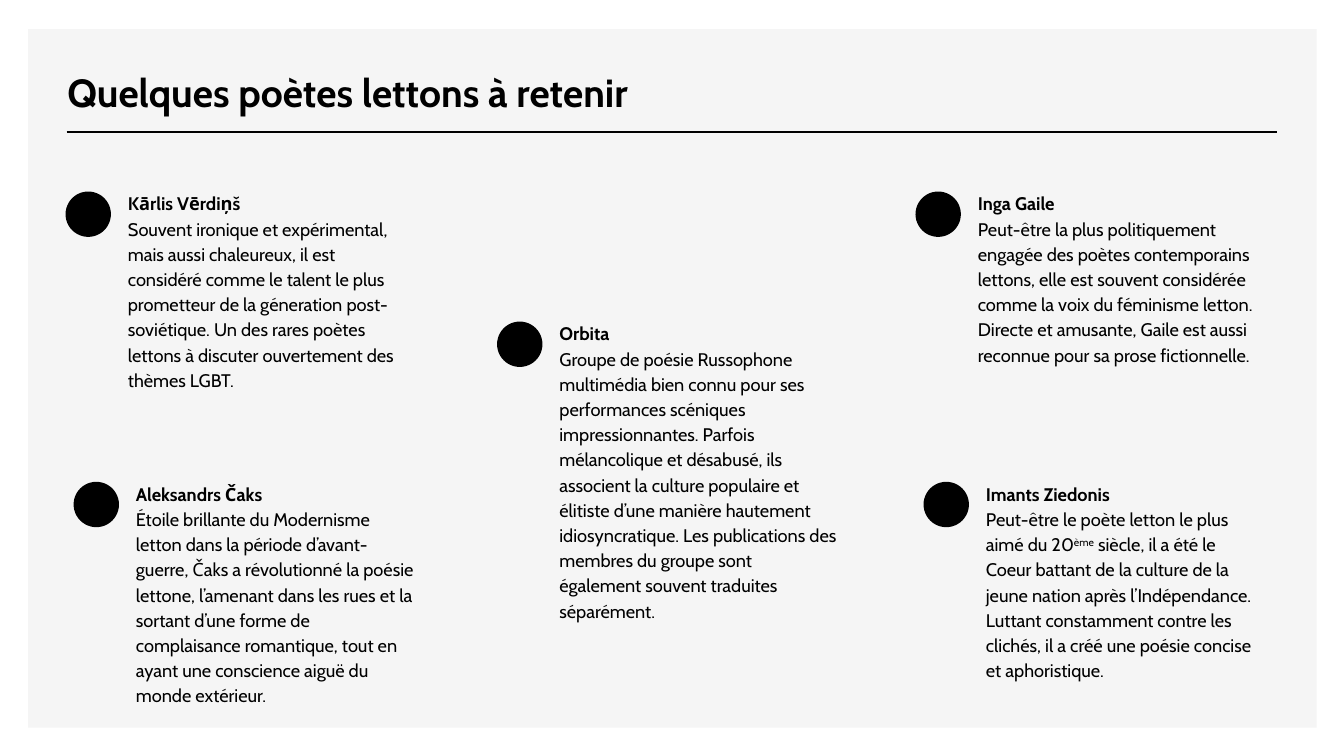
import pptx
import pptx.dml.color
import pptx.enum.shapes
import pptx.enum.text
import pptx.util
from lxml import etree
from pptx.util import Inches, Pt

TITLE = "Quelques poètes lettons à retenir"

# left and top of the dot, text height, name, description as (text, superscript) runs
POETS = [
    (0.65, 1.9, 2.05, "Kārlis Vērdiņš", [
        ("Souvent ironique et expérimental, mais aussi chaleureux, il est considéré comme "
         "le talent le plus prometteur de la géneration post-soviétique. Un des rares poètes "
         "lettons à discuter ouvertement des thèmes LGBT.", False)]),
    (4.93, 3.19, 3.1, "Orbita", [
        ("Groupe de poésie Russophone multimédia bien connu pour ses performances scéniques "
         "impressionnantes. Parfois mélancolique et désabusé, ils associent la culture "
         "populaire et élitiste d’une manière hautement idiosyncratique. Les publications des "
         "membres du groupe sont également souvent traduites séparément.", False)]),
    (9.08, 1.9, 2.32, "Inga Gaile", [
        ("Peut-être la plus politiquement engagée des poètes contemporains lettons, elle est "
         "souvent considérée comme la voix du féminisme letton. Directe et amusante, Gaile "
         "est aussi reconnue pour sa prose fictionnelle.", False)]),
    (0.73, 4.78, 2.3, "Aleksandrs Čaks", [
        ("Étoile brillante du Modernisme letton dans la période d’avant-guerre, Čaks a "
         "révolutionné la poésie lettone, l’amenant dans les rues et la sortant d’une forme "
         "de complaisance romantique, tout en ayant une conscience aiguë du monde extérieur.",
         False)]),
    (9.16, 4.78, 2.4, "Imants Ziedonis", [
        ("Peut-être le poète letton le plus aimé du 20", False),
        ("ème", True),
        (" siècle, il a été le Coeur battant de la culture de la jeune nation après "
         "l’Indépendance. Luttant constamment contre les clichés, il a créé une poésie "
         "concise et aphoristique.", False)]),
]

THEME = {
    "font": "Cabin",
    "ink": pptx.dml.color.RGBColor.from_string("000000"),
    "panel": pptx.dml.color.RGBColor.from_string("F5F5F5"),
    "title": Pt(28),
    "body": Pt(13),
    "leading": Pt(18),
}
DOT = 0.45
TEXT_DX, TEXT_DY, TEXT_W = 0.52, -0.07, 2.95


def add_filled(s, kind, box, color):
    sp = s.shapes.add_shape(kind, *map(Inches, box))
    sp.shadow.inherit = False
    sp.fill.solid()
    sp.fill.fore_color.rgb = color
    sp.line.fill.background()


def add_text(s, box, size, anchor):
    """Add a wrapping text box and return its first paragraph."""
    tf = s.shapes.add_textbox(*map(Inches, box)).text_frame
    tf.word_wrap = True
    tf.vertical_anchor = anchor
    p = tf.paragraphs[0]
    p.font.name = THEME["font"]
    p.font.size = size
    p.font.color.rgb = THEME["ink"]
    return p


def add_run(p, text, bold=False, superscript=False):
    r = p.add_run()
    r.text = text
    r.font.bold = bold
    if superscript:
        r.font._element.set("baseline", "30000")


def add_rule(s, left, right, y):
    line = s.shapes.add_connector(pptx.enum.shapes.MSO_CONNECTOR.STRAIGHT,
                                  Inches(left), Inches(y), Inches(right), Inches(y))
    line.line.color.rgb = THEME["ink"]
    line.line.width = Pt(2)
    etree.SubElement(line._element.spPr, pptx.oxml.ns.qn("a:effectLst"))


def add_poet(s, left, top, height, name, description):
    add_filled(s, pptx.enum.shapes.MSO_SHAPE.OVAL, (left, top, DOT, DOT), THEME["ink"])
    p = add_text(s, (left + TEXT_DX, top + TEXT_DY, TEXT_W, height),
                 THEME["body"], pptx.enum.text.MSO_ANCHOR.TOP)
    p.line_spacing = THEME["leading"]
    p.space_before, p.space_after = Pt(10), Pt(6)
    add_run(p, name, bold=True)
    p.add_line_break()
    for text, superscript in description:
        add_run(p, text, superscript=superscript)


def main():
    prs = pptx.Presentation()
    prs.slide_width, prs.slide_height = Inches(13.33), Inches(7.5)
    s = prs.slides.add_slide(prs.slide_layouts[6])
    add_filled(s, pptx.enum.shapes.MSO_SHAPE.RECTANGLE,
               (0.28, 0.29, 12.78, 6.93), THEME["panel"])
    add_rule(s, 0.66, 12.67, 1.31)
    p = add_text(s, (0.57, 0.49, 9.59, 0.7), THEME["title"],
                 pptx.enum.text.MSO_ANCHOR.BOTTOM)
    add_run(p, TITLE, bold=True)
    for poet in POETS:
        add_poet(s, *poet)
    prs.save("out.pptx")


if __name__ == "__main__":
    main()
